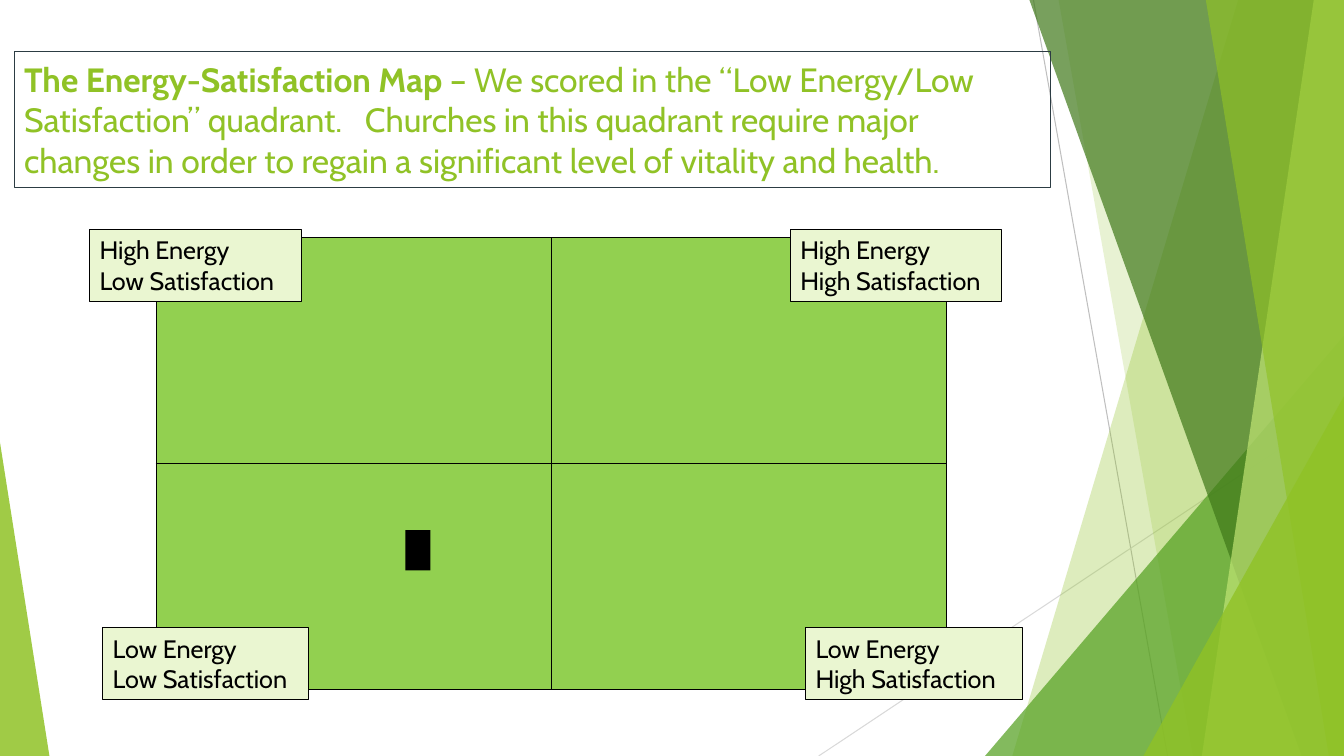
from pptx import Presentation
from pptx.dml.color import RGBColor
from pptx.enum.shapes import MSO_CONNECTOR as LINE, MSO_SHAPE as SHAPE
from pptx.enum.text import MSO_ANCHOR as ANCHOR, PP_ALIGN as ALIGN
from pptx.oxml.ns import qn
from pptx.util import Pt
from lxml.etree import SubElement

PX = 9144  # one px is a hundredth of an inch
WIDE, HIGH = 1333, 750
FONT = "Cabin"
LIME = "90C226"
BLACK = "000000"


def color(code):
    return RGBColor.from_string(code)


def scale(*sizes):
    return [size * PX for size in sizes]


def paint(shape, fill=None, line=None, alpha=100):
    shape.shadow.inherit = False
    if fill:
        shape.fill.solid()
        shape.fill.fore_color.rgb = color(fill)
        if alpha < 100:
            tint = shape.fill._xPr.find(qn("a:solidFill"))[0]
            SubElement(tint, qn("a:alpha"), val=str(alpha * 1000))
    else:
        shape.fill.background()
    if line:
        shape.line.color.rgb = color(line)
        shape.line.width = Pt(0.75)
    else:
        shape.line.fill.background()


def add_box(slide, box, fill=None, line=None):
    shape = slide.shapes.add_shape(SHAPE.RECTANGLE, *scale(*box))
    paint(shape, fill, line)
    return shape


def style(run, size, code, bold=False):
    run.font.name = FONT
    run.font.size = Pt(size)
    run.font.bold = bold
    run.font.color.rgb = color(code)


def add_ray(slide, start, end, code):
    ray = slide.shapes.add_connector(LINE.STRAIGHT, *scale(*start, *end))
    ray.line.color.rgb = color(code)
    ray.line.width = Pt(0.75)
    SubElement(ray._element.spPr, qn("a:effectLst"))


def add_band(slide, top, foot, fill, alpha):
    """Fill from a slanted edge to the right side of the slide."""
    form = slide.shapes.build_freeform(top, 0, scale=PX)
    form.add_line_segments([(WIDE, 0), (WIDE, HIGH), (foot, HIGH)], close=True)
    paint(form.convert_to_shape(), fill, alpha=alpha)


def add_wedge(slide, left, top, width, tip, fill, alpha):
    """Stand a triangle on the bottom edge of the slide."""
    wedge = slide.shapes.add_shape(
        SHAPE.ISOSCELES_TRIANGLE, *scale(left, top, width, HIGH - top))
    wedge.adjustments[0] = tip
    paint(wedge, fill, alpha=alpha)


def add_decor(slide):
    add_ray(slide, (1025, 0), (1158, HIGH), "BFBFBF")
    add_ray(slide, (WIDE, 403), (812, HIGH), "D9D9D9")
    add_band(slide, 1228, 1004, LIME, 30)
    add_band(slide, 1050, 1183, LIME, 20)
    add_wedge(slide, 977, 333, 356, 1, "54A021", 72)
    add_band(slide, 1021, 1291, "3F7819", 70)
    add_band(slide, 1303, 1192, "C0E474", 70)
    add_band(slide, 1196, 1318, LIME, 65)
    add_wedge(slide, 1134, 393, 199, 1, LIME, 80)
    add_wedge(slide, 0, 439, 49, 0, LIME, 85)


def add_title(slide, box, lead, rest):
    frame = add_box(slide, box, line="2C3C43").text_frame
    frame.word_wrap = True
    frame.vertical_anchor = ANCHOR.MIDDLE
    para = frame.paragraphs[0]
    para.alignment = ALIGN.LEFT
    for text, bold in ((lead, True), (rest, False)):
        run = para.add_run()
        run.text = text
        style(run, 24, LIME, bold)


def add_edges(cell):
    props = cell._tc.get_or_add_tcPr()
    for spot, side in enumerate(("lnL", "lnR", "lnT", "lnB")):
        edge = props.makeelement(qn("a:" + side), {"w": str(Pt(1))})
        fill = SubElement(edge, qn("a:solidFill"))
        SubElement(fill, qn("a:srgbClr"), val=BLACK)
        props.insert(spot, edge)


def add_grid(slide, box):
    table = slide.shapes.add_table(2, 2, *scale(*box)).table
    table.first_row = table.horz_banding = False
    for cell in table.iter_cells():
        cell.fill.solid()
        cell.fill.fore_color.rgb = color("92D050")
        add_edges(cell)


def add_label(slide, box, text):
    frame = add_box(slide, box, "EAF6D1", BLACK).text_frame
    frame.word_wrap = True
    frame.vertical_anchor = ANCHOR.TOP
    frame.text = text
    for para in frame.paragraphs:
        para.alignment = ALIGN.LEFT
        style(para.runs[0], 18, BLACK)


def add_map(slide, box):
    """Draw the four quadrants, their corner labels and the score mark."""
    left, top, width, height = box
    add_grid(slide, box)
    labels = (
        (-66, -8, 210, "High Energy\nLow Satisfaction"),
        (629, -8, 209, "High Energy\nHigh Satisfaction"),
        (-53, 387, 204, "Low Energy\nLow Satisfaction"),
        (644, 387, 215, "Low Energy\nHigh Satisfaction"),
    )
    for x, y, wide, text in labels:
        add_label(slide, (left + x, top + y, wide, 71), text)
    add_box(slide, (left + 247, top + 290, 25, 40), BLACK)


def main():
    deck = Presentation()
    deck.slide_width, deck.slide_height = scale(WIDE, HIGH)
    slide = deck.slides.add_slide(deck.slide_layouts[6])
    add_decor(slide)
    add_title(
        slide, (14, 51, 1028, 135), "The Energy-Satisfaction Map ",
        "– We scored in the “Low Energy/Low Satisfaction” quadrant.   "
        "Churches in this quadrant require major changes in order to regain "
        "a significant level of vitality and health.")
    add_map(slide, (155, 236, 784, 448))
    deck.save("out.pptx")


if __name__ == "__main__":
    main()
